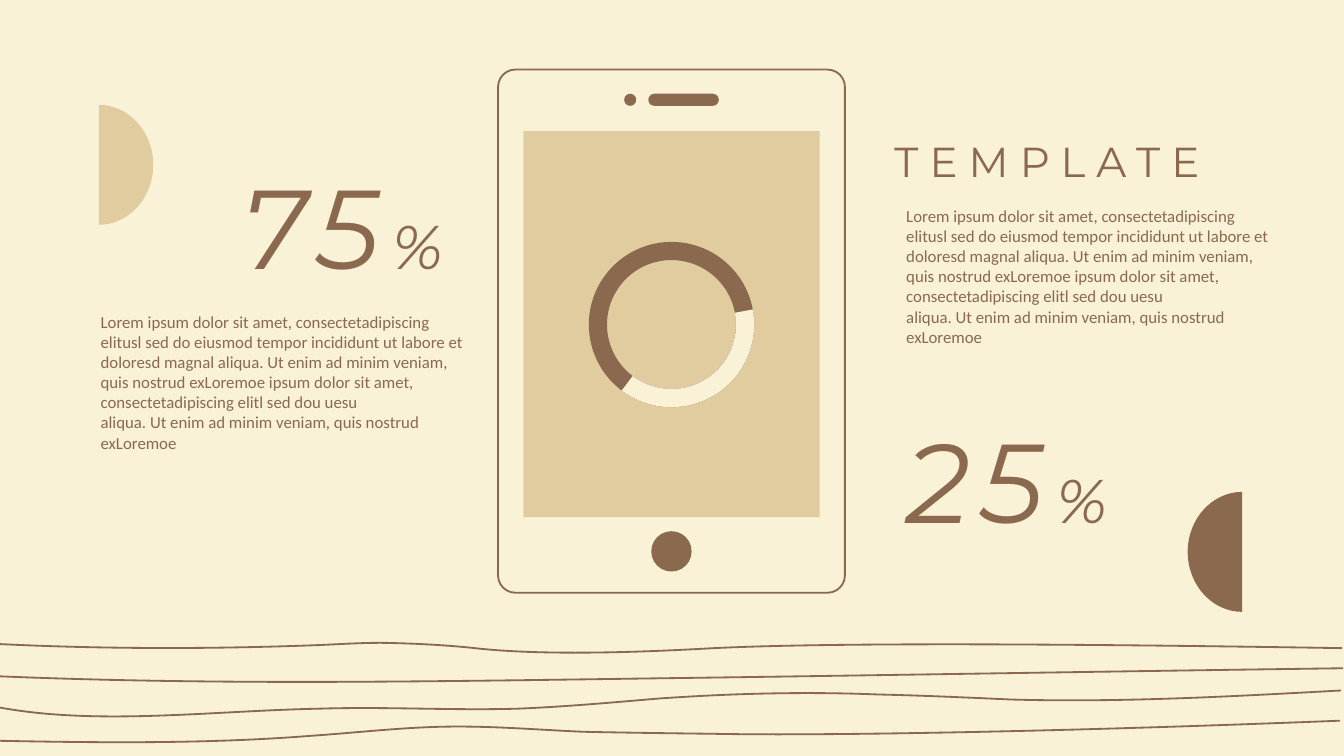
from pptx import Presentation
from pptx.dml.color import RGBColor
from pptx.enum.shapes import MSO_SHAPE
from pptx.enum.text import MSO_ANCHOR, MSO_AUTO_SIZE, PP_ALIGN
from pptx.oxml.ns import qn
from pptx.util import Inches, Pt

CREAM = RGBColor(0xF9, 0xF2, 0xD6)
SAND = RGBColor(0xE1, 0xCC, 0xA0)
BROWN = RGBColor(0x8A, 0x69, 0x4F)

RECTANGLE = MSO_SHAPE.RECTANGLE
ROUNDED = MSO_SHAPE.ROUNDED_RECTANGLE
OVAL = MSO_SHAPE.OVAL
DONUT = MSO_SHAPE.DONUT
BLOCK_ARC = MSO_SHAPE.BLOCK_ARC
TOP = MSO_ANCHOR.TOP
LEFT = PP_ALIGN.LEFT
GROW = MSO_AUTO_SIZE.SHAPE_TO_FIT_TEXT

LINE_WIDTH = Pt(1.3)
LETTER_SPACING = "800"
ROUNDNESS = 0.55

BODY = [
    "Lorem ipsum dolor sit amet, consectetadipiscing elitusl sed do eiusmod "
    "tempor incididunt ut labore et doloresd magnal aliqua. Ut enim ad minim "
    "veniam, quis nostrud exLoremoe ipsum dolor sit amet, consectetadipiscing "
    "elitl sed dou uesu",
    "aliqua. Ut enim ad minim veniam, quis nostrud exLoremoe",
]

WAVES = [
    [(0, 1.05), (1.03, 1.07), (2.08, 1.08), (3.09, 1.0),
     (3.53, 0.97), (3.95, 0.92), (4.39, 0.91),
     (4.86, 0.9), (5.32, 0.94), (5.78, 0.96),
     (5.78, 0.96), (6.18, 0.97), (7.07, 0.98),
     (8, 1.0), (10.27, 0.97), (13.29, 0.85)],
    [(0, 0.72), (0.99, 0.9), (2.11, 0.75), (3.19, 0.73),
     (3.84, 0.71), (4.5, 0.75), (5.15, 0.73),
     (5.62, 0.71), (6.07, 0.67), (6.53, 0.63),
     (7.25, 0.58), (7.98, 0.56), (8.71, 0.59),
     (9.15, 0.6), (9.59, 0.62), (10.03, 0.64),
     (11.12, 0.67), (12.21, 0.61), (13.3, 0.55)],
    [(0, 0.41), (2.16, 0.5), (4.34, 0.46), (6.51, 0.43),
     (8.78, 0.4), (11.05, 0.36), (13.32, 0.33)],
    [(0, 0.09), (1.04, 0.14), (2.1, 0.14), (3.15, 0.1),
     (3.4, 0.09), (3.66, 0.07), (3.91, 0.08),
     (4.32, 0.09), (4.62, 0.12), (4.71, 0.13),
     (5.5, 0.22), (6.71, 0.15), (7.08, 0.13),
     (7.91, 0.09), (9.6, 0.07), (13.31, 0.13)],
]


def paint(shape, fill=None, line=None):
    shape.shadow.inherit = False
    if fill is None:
        shape.fill.background()
    else:
        shape.fill.solid()
        shape.fill.fore_color.rgb = fill
    if line is None:
        shape.line.fill.background()
    else:
        shape.line.color.rgb = line
        shape.line.width = LINE_WIDTH


def add_preset(page, kind, box, fill=None, line=None, adjustments=()):
    shape = page.shapes.add_shape(kind, *map(Inches, box))
    for index, value in enumerate(adjustments):
        shape.adjustments[index] = value
    paint(shape, fill, line)


def add_curve(page, nodes, close, fill=None, line=None):
    points = [(Inches(x), Inches(y)) for x, y in nodes]
    builder = page.shapes.build_freeform(*points[0])
    builder.add_line_segments(points[1:], close=close)
    shape = builder.convert_to_shape()
    segments = shape._element.xpath(".//a:lnTo")
    for first in range(0, len(segments), 3):
        curve, *controls = segments[first:first + 3]
        curve.tag = qn("a:cubicBezTo")
        for control in controls:
            curve.append(control[0])
            control.getparent().remove(control)
    paint(shape, fill, line)


def add_half_disc(page, box, color, faces_right):
    left, top, width, height = box
    flat_side = left if faces_right else left + width
    reach = width if faces_right else -width
    profile = [(0, 0), (ROUNDNESS, 0), (1, (1 - ROUNDNESS) / 2), (1, 0.5),
               (1, (1 + ROUNDNESS) / 2), (ROUNDNESS, 1), (0, 1)]
    nodes = [(flat_side + reach * x, top + height * y) for x, y in profile]
    add_curve(page, nodes, True, fill=color)


def add_waves(page, left, top):
    for wave in WAVES:
        nodes = [(left + x, top + y) for x, y in wave]
        add_curve(page, nodes, False, line=BROWN)


def add_ring(page, box):
    thickness = 0.11
    start, end = 349.5, 127
    add_preset(page, DONUT, box, fill=BROWN, adjustments=[thickness])
    add_preset(page, BLOCK_ARC, box, fill=CREAM,
               adjustments=[start * 0.6, end * 0.6, thickness])


def add_tablet(page, box):
    left, top, width, height = box
    add_preset(page, ROUNDED, box, line=BROWN, adjustments=[0.05])
    add_preset(page, ROUNDED, (left + 1.49, top + 0.24, 0.7, 0.12),
               fill=BROWN, adjustments=[0.5])
    add_preset(page, OVAL, (left + 1.25, top + 0.24, 0.12, 0.12), fill=BROWN)
    add_preset(page, RECTANGLE, (left + 0.25, top + 0.61, width - 0.5, 3.83), fill=SAND)
    add_preset(page, OVAL, (left + width / 2 - 0.2, top + height - 0.61, 0.4, 0.4),
               fill=BROWN)
    add_ring(page, (left + width / 2 - 0.82, top + 1.71, 1.64, 1.64))


def format_span(span, font, size, italic=False, spaced=False):
    span.font.name = font
    span.font.size = Pt(size)
    span.font.italic = italic
    span.font.color.rgb = BROWN
    if spaced:
        span.font._element.set("spc", LETTER_SPACING)


def format_frame(frame, wrap):
    frame.word_wrap = wrap
    frame.auto_size = GROW
    frame.vertical_anchor = TOP


def add_title(page, box):
    title = page.shapes.title
    title.left, title.top, title.width, title.height = map(Inches, box)
    title.text_frame.text = "TEMPLATE"
    format_frame(title.text_frame, False)
    para = title.text_frame.paragraphs[0]
    para.alignment = LEFT
    format_span(para.runs[0], "Montserrat", 29.9, spaced=True)


def add_body(page, left, top):
    frame = page.shapes.add_textbox(*map(Inches, (left, top, 3.87, 1.51))).text_frame
    frame.text = "\n".join(BODY)
    format_frame(frame, True)
    for para in frame.paragraphs:
        format_span(para.runs[0], "Calibri", 12)


def add_figure(page, left, top, number):
    frame = page.shapes.add_textbox(*map(Inches, (left, top, 2.65, 1.45))).text_frame
    format_frame(frame, False)
    para = frame.paragraphs[0]
    for text, size in ((number, 80), ("%", 44)):
        span = para.add_run()
        span.text = text
        format_span(span, "Montserrat", size, italic=True, spaced=True)


def main():
    deck = Presentation()
    deck.slide_width, deck.slide_height = Inches(13.33), Inches(7.5)
    page = deck.slides.add_slide(deck.slide_layouts[5])
    page.background.fill.solid()
    page.background.fill.fore_color.rgb = CREAM
    add_half_disc(page, (11.78, 4.88, 0.54, 1.19), BROWN, False)
    add_half_disc(page, (0.98, 1.04, 0.54, 1.19), SAND, True)
    add_waves(page, 0, 6.3)
    add_tablet(page, (4.94, 0.69, 3.44, 5.19))
    add_title(page, (8.77, 1.3, 3.59, 0.61))
    add_body(page, 8.89, 1.99)
    add_figure(page, 8.89, 4.03, "25")
    add_figure(page, 2.3, 1.51, "75")
    add_body(page, 0.9, 3.04)
    deck.save("out.pptx")


if __name__ == "__main__":
    main()
